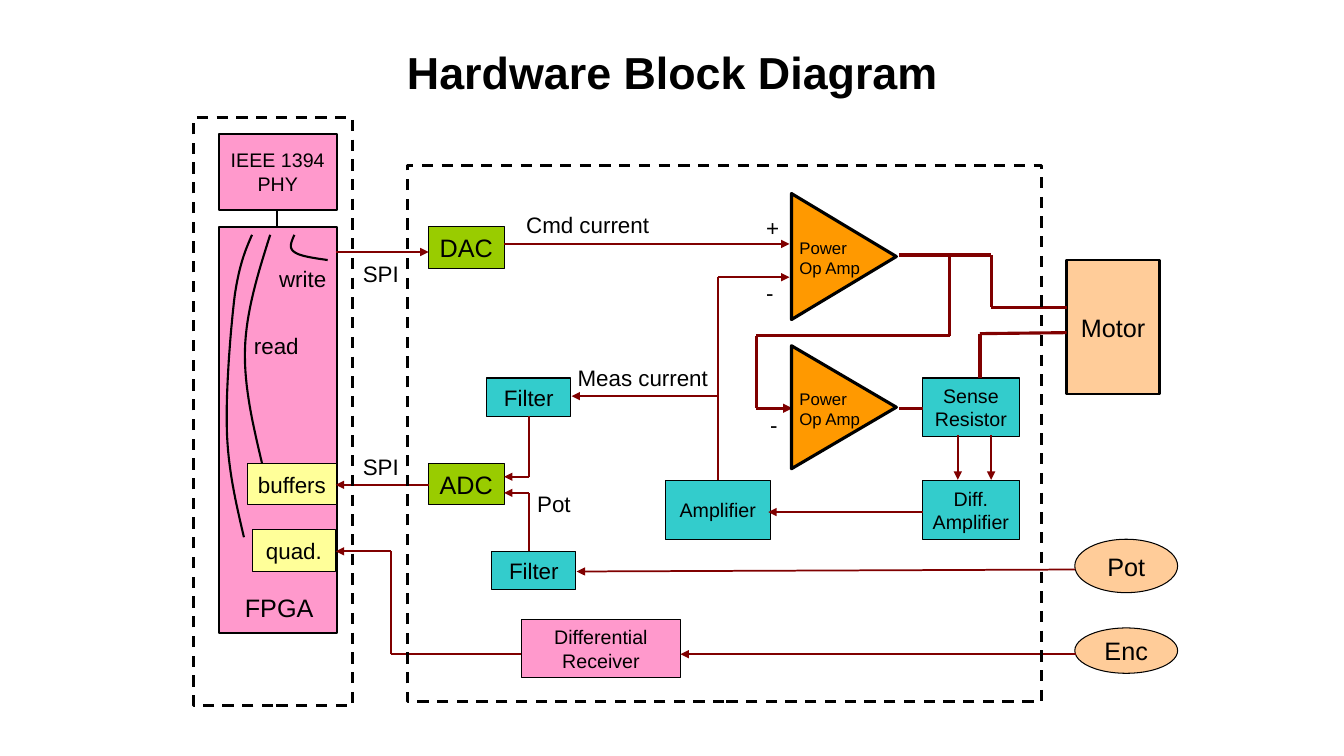
from pptx import Presentation
from pptx.dml.color import RGBColor
from pptx.enum.dml import MSO_LINE
from pptx.enum.shapes import MSO_CONNECTOR, MSO_SHAPE
from pptx.enum.text import MSO_ANCHOR, PP_ALIGN
from pptx.oxml.ns import qn
from pptx.util import Inches, Pt
from lxml.etree import SubElement

FONT = "Arial"
BLACK, MAROON = "000000", "800000"
PINK, TEAL, GREEN = "FF99CC", "33CCCC", "99CC00"
PEACH, YELLOW, ORANGE = "FFCC99", "FFFF99", "FF9900"
RECT, OVAL = MSO_SHAPE.RECTANGLE, MSO_SHAPE.OVAL

TITLE = "Hardware Block Diagram"

# text, (left, top, width, height), fill, font size, line width, kind
BLOCKS = [
    ("Motor", (10.58, 2.58, 0.92, 1.33), PEACH, 18, 2, RECT),
    ("Amplifier", (6.6, 4.77, 1.04, 0.58), TEAL, 14, 0.75, RECT),
    ("ADC", (4.25, 4.6, 0.75, 0.41), GREEN, 18, 0.75, RECT),
    ("DAC", (4.25, 2.25, 0.75, 0.41), GREEN, 18, 0.75, RECT),
    ("Filter", (4.88, 5.47, 0.83, 0.38), TEAL, 16, 0.75, RECT),
    ("Filter", (4.83, 3.75, 0.83, 0.38), TEAL, 16, 0.75, RECT),
    ("Diff. Amplifier", (9.15, 4.77, 0.96, 0.58), TEAL, 14, 0.75, RECT),
    ("Sense Resistor", (9.15, 3.75, 0.96, 0.58), TEAL, 14, 0.75, RECT),
    ("Differential Receiver", (5.17, 6.15, 1.58, 0.57), PINK, 14, 0.75, RECT),
    ("IEEE 1394\nPHY", (2.17, 1.33, 1.17, 0.75), PINK, 14, 1.5, RECT),
    ("", (2.17, 2.25, 1.17, 4.03), PINK, 18, 1.5, RECT),
    ("buffers", (2.45, 4.6, 0.89, 0.41), YELLOW, 16, 0.75, RECT),
    ("quad.", (2.5, 5.25, 0.83, 0.42), YELLOW, 16, 0.75, RECT),
    ("Pot", (10.66, 5.35, 1.02, 0.53), PEACH, 18, 0.75, OVAL),
    ("Enc", (10.66, 6.23, 1.02, 0.45), PEACH, 18, 0.75, OVAL),
]

# corner points, arrowhead at the last point
SIGNAL_WIRES = [
    ([(9.5, 4.32), (9.5, 4.76)], True),
    ([(9.83, 4.32), (9.83, 4.76)], True),
    ([(9.15, 5.08), (7.62, 5.08)], True),
    ([(7.12, 3.93), (5.67, 3.93)], True),
    ([(5, 2.42), (7.83, 2.42)], True),
    ([(5.25, 4.13), (5.25, 4.73), (5, 4.73)], True),
    ([(5.25, 5.47), (5.25, 4.89), (5, 4.89)], True),
    ([(10.67, 6.49), (6.75, 6.49)], True),
    ([(10.66, 5.65), (5.72, 5.67)], True),
    ([(5.17, 6.49), (3.88, 6.49), (3.88, 5.47), (3.33, 5.47)], True),
    ([(4.25, 4.81), (3.33, 4.81)], True),
    ([(3.33, 2.5), (4.25, 2.5)], True),
    ([(7.12, 4.76), (7.12, 2.75), (7.83, 2.75)], True),
]
POWER_WIRES = [
    ([(8.92, 2.53), (9.83, 2.53), (9.83, 3.05), (10.58, 3.05)], False),
    ([(10.58, 3.3), (9.72, 3.31), (9.72, 3.75)], False),
    ([(8.92, 4.05), (9.15, 4.05)], False),
    ([(9.42, 2.53), (9.42, 3.33), (7.5, 3.33), (7.5, 4.05), (7.86, 4.05)], True),
]
BUS_LINK = [([(2.75, 2.08), (2.75, 2.25)], False)]

# start point, then cubic segments of two control points and an end point
FPGA_CURVES = [
    [(2.6, 4.6), (2.51, 4.22), (2.42, 3.84), (2.43, 3.47),
     (2.44, 3.09), (2.56, 2.71), (2.68, 2.33)],
    [(2.42, 5.33), (2.34, 4.99), (2.26, 4.65), (2.25, 4.25),
     (2.24, 3.85), (2.29, 3.24), (2.33, 2.92),
     (2.38, 2.6), (2.44, 2.47), (2.5, 2.33)],
    [(2.92, 2.33), (2.89, 2.4), (2.86, 2.46), (2.92, 2.5),
     (2.97, 2.54), (3.11, 2.56), (3.25, 2.58)],
]

OP_AMPS = [(7.85, 1.92, 1.04, 1.25), (7.85, 3.43, 1.04, 1.22)]
BOARDS = [(1.92, 1.17, 1.58, 5.83), (4.04, 1.64, 6.29, 5.32)]

# text, (left, top, width, height), font size
LABELS = [
    ("+", (7.5, 2.08, 0.33, 0.37), 16),
    ("-", (7.5, 2.72, 0.33, 0.37), 16),
    ("-", (7.54, 4.03, 0.33, 0.37), 16),
    ("Pot", (5.23, 4.81, 0.83, 0.37), 16),
    ("Meas current", (5.63, 3.56, 1.62, 0.37), 16),
    ("Cmd current", (5.12, 2.05, 1.62, 0.37), 16),
    ("SPI", (3.5, 2.53, 0.58, 0.37), 16),
    ("SPI", (3.5, 4.45, 0.58, 0.37), 16),
    ("FPGA", (2.33, 5.83, 0.92, 0.4), 18),
    ("read", (2.42, 3.25, 0.75, 0.37), 16),
    ("write", (2.67, 2.58, 0.75, 0.37), 16),
    ("Power Op Amp", (7.83, 2.31, 0.83, 0.47), 12),
    ("Power Op Amp", (7.83, 3.81, 0.83, 0.46), 12),
]


def rgb(value):
    return RGBColor.from_string(value)


def inches(values):
    return [Inches(value) for value in values]


def write_text(shape, text, size, align, anchor, bold=False):
    frame = shape.text_frame
    frame.word_wrap = True
    frame.vertical_anchor = anchor
    frame.text = text
    for paragraph in frame.paragraphs:
        paragraph.alignment = align
        paragraph.font.name = FONT
        paragraph.font.size = Pt(size)
        paragraph.font.bold = bold
        paragraph.font.color.rgb = rgb(BLACK)


def style_outline(shape, width, fill=None):
    shape.shadow.inherit = False
    if fill:
        shape.fill.solid()
        shape.fill.fore_color.rgb = rgb(fill)
    else:
        shape.fill.background()
    shape.line.color.rgb = rgb(BLACK)
    shape.line.width = Pt(width)


def add_block(shapes, text, box, fill, size, width, kind):
    shape = shapes.add_shape(kind, *inches(box))
    style_outline(shape, width, fill)
    if text:
        write_text(shape, text, size, PP_ALIGN.CENTER, MSO_ANCHOR.MIDDLE)


def add_wire(shapes, points, arrow, color, width):
    """Join the corner points with straight connectors."""
    for start, end in zip(points, points[1:]):
        line = shapes.add_connector(MSO_CONNECTOR.STRAIGHT, *inches(start + end))
        line.line.color.rgb = rgb(color)
        line.line.width = Pt(width)
        properties = line._element.spPr
        if arrow and end == points[-1]:
            SubElement(properties.find(qn("a:ln")), qn("a:tailEnd"), type="triangle")
        SubElement(properties, qn("a:effectLst"))


def add_curve(shapes, points, steps=16):
    """Draw cubic segments as a fine open polyline."""
    trace = []
    for first in range(0, len(points) - 1, 3):
        a, b, c, d = points[first:first + 4]
        for step in range(1, steps + 1):
            t = step / steps
            u = 1 - t
            trace.append(inches(
                u**3 * a[i] + 3 * u * u * t * b[i] + 3 * u * t * t * c[i] + t**3 * d[i]
                for i in (0, 1)))
    # The builder rounds to whole units, so points are given in EMU.
    builder = shapes.build_freeform(*inches(points[0]))
    builder.add_line_segments(trace, close=False)
    style_outline(builder.convert_to_shape(), 1.5)


def add_op_amp(shapes, left, top, width, height):
    """Place an upright triangle so that a quarter turn fills the given box."""
    shift = (width - height) / 2
    box = (left + shift, top - shift, height, width)
    shape = shapes.add_shape(MSO_SHAPE.ISOSCELES_TRIANGLE, *inches(box))
    shape.rotation = 90
    style_outline(shape, 2.25, ORANGE)


def main():
    presentation = Presentation()
    presentation.slide_width = Inches(13.33)
    presentation.slide_height = Inches(7.5)
    slide = presentation.slides.add_slide(presentation.slide_layouts[5])
    shapes = slide.shapes

    title = shapes.title
    title.left, title.top, title.width, title.height = inches((2.42, 0.25, 8.5, 0.92))
    write_text(title, TITLE, 32, PP_ALIGN.CENTER, MSO_ANCHOR.MIDDLE, bold=True)

    for block in BLOCKS:
        add_block(shapes, *block)
    for wires, color, width in ((SIGNAL_WIRES, MAROON, 1.25),
                                (POWER_WIRES, MAROON, 2.25),
                                (BUS_LINK, BLACK, 1.25)):
        for points, arrow in wires:
            add_wire(shapes, points, arrow, color, width)
    for points in FPGA_CURVES:
        add_curve(shapes, points)
    for box in OP_AMPS:
        add_op_amp(shapes, *box)
    for box in BOARDS:
        board = shapes.add_shape(RECT, *inches(box))
        style_outline(board, 2)
        board.line.dash_style = MSO_LINE.DASH
    for text, box, size in LABELS:
        label = shapes.add_textbox(*inches(box))
        write_text(label, text, size, PP_ALIGN.LEFT, MSO_ANCHOR.TOP)

    presentation.save("out.pptx")


if __name__ == "__main__":
    main()
